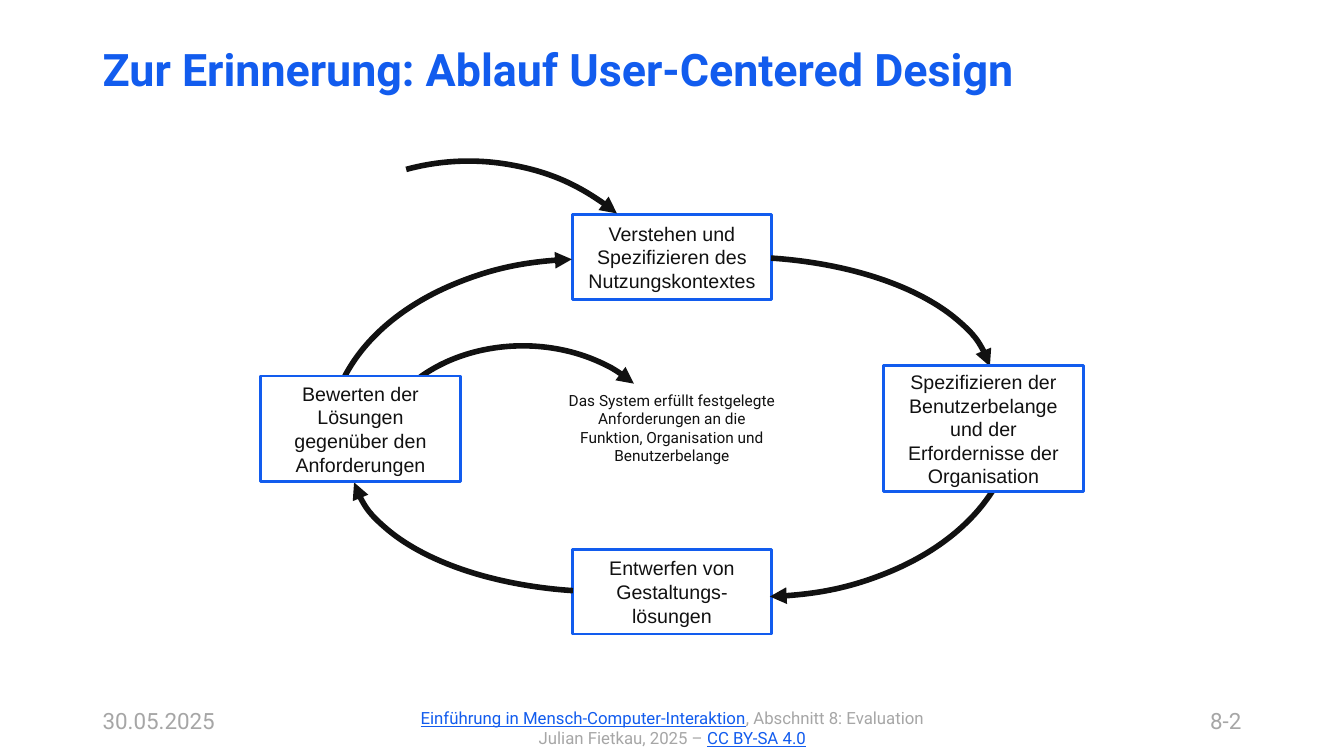
from pptx import Presentation
from pptx.dml.color import RGBColor
from pptx.enum.shapes import MSO_SHAPE
from pptx.enum.text import MSO_ANCHOR, PP_ALIGN
from pptx.oxml import parse_xml
from pptx.oxml.ns import nsdecls
from pptx.util import Inches, Pt

RECT, ARC = MSO_SHAPE.RECTANGLE, MSO_SHAPE.ARC
LEFT, CENTER, RIGHT = PP_ALIGN.LEFT, PP_ALIGN.CENTER, PP_ALIGN.RIGHT
TOP, MIDDLE = MSO_ANCHOR.TOP, MSO_ANCHOR.MIDDLE
CELL = Inches(0.1)
COLS, ROWS = 133.33, 75
BLUE, GRAY, INK, WHITE = "125CEE", "A6A6A6", "111111", "FFFFFF"


def color(code):
    return RGBColor.from_string(code)


def cells(*sizes):
    return [round(size * CELL) for size in sizes]


def around(box, dx, dy, wide, high):
    left, top, width, height = box
    return (left + width / 2 + dx - wide / 2,
            top + height / 2 + dy - high / 2, wide, high)


def write(shape, lines, size, font, code, align=LEFT, anchor=TOP, bold=False):
    frame = shape.text_frame
    frame.word_wrap = True
    frame.vertical_anchor = anchor
    for num, line in enumerate(lines):
        para = frame.add_paragraph() if num else frame.paragraphs[0]
        para.alignment = align
        for text, link in line:
            run = para.add_run()
            run.text = text
            run.font.name = font
            run.font.size = Pt(size)
            run.font.bold = bold
            run.font.underline = link
            run.font.color.rgb = color(BLUE if link else code)
    return frame


def label(slide, box, lines, size, code, **style):
    shape = slide.shapes.add_textbox(*cells(*box))
    return write(shape, lines, size, "Roboto", code, **style)


def plain(*texts):
    return [[(text, False)] for text in texts]


def step(slide, box, texts):
    shape = slide.shapes.add_shape(RECT, *cells(*box))
    shape.shadow.inherit = False
    shape.fill.solid()
    shape.fill.fore_color.rgb = color(WHITE)
    shape.line.color.rgb = color(BLUE)
    shape.line.width = Pt(2)
    write(shape, plain(*texts), 14, "Arial", INK, CENTER, MIDDLE)


def arrow(slide, box, turn, start, end):
    shape = slide.shapes.add_shape(ARC, *cells(*box))
    shape.shadow.inherit = False
    shape.fill.background()
    shape.rotation = turn
    shape.adjustments[0] = start
    shape.adjustments[1] = end
    shape.line.color.rgb = color(INK)
    shape.line.width = Pt(4)
    tip = parse_xml(f'<a:tailEnd {nsdecls("a")} type="triangle"/>')
    shape.line._get_or_add_ln().append(tip)


def header(slide, box):
    frame = label(slide, box, plain("Zur Erinnerung: Ablauf User-Centered Design"),
                  32, BLUE, anchor=MIDDLE, bold=True)
    frame.paragraphs[0].line_spacing = 0.9


def cycle(slide, box):
    wide, reach, rise = 19.8, 30.9, 16.6
    steps = [
        (0, rise, 8.4, ["Entwerfen von", "Gestaltungs-lösungen"]),
        (0, -rise, 8.4, ["Verstehen und", "Spezifizieren des", "Nutzungskontextes"]),
        (reach, 0.45, 12.5, ["Spezifizieren der",
                             "Benutzerbelange und der Erfordernisse der Organisation"]),
        (-reach, 0.45, 10.5, ["Bewerten der", "Lösungen", "gegenüber den",
                              "Anforderungen"]),
    ]
    arrows = [
        (6.5, -3.95, 50.6, 25.3, 0, 170.93, 213.53),
        (-6.5, 3.95, 50.6, 25.3, 180, 170.93, 213.53),
        (8.7, -0.6, 50.6, 35.4, 0, 9.9, 52.03),
        (-8.7, 1.3, 50.6, 35.4, 180, 8.43, 51.59),
        (-20.3, -2.9, 46.8, 46.4, 159.9, 56.96, 89.73),
        (-14.8, 3.5, 29.6, 22.6, 180, 21.67, 87.35),
    ]
    for dx, dy, high, texts in steps[:2]:
        step(slide, around(box, dx, dy, wide, high), texts)
    for dx, dy, width, high, turn, start, end in arrows:
        arrow(slide, around(box, dx, dy, width, high), turn, start, end)
    for dx, dy, high, texts in steps[2:]:
        step(slide, around(box, dx, dy, wide, high), texts)
    note = ("Das System erfüllt festgelegte Anforderungen an die "
            "Funktion, Organisation und Benutzerbelange")
    label(slide, around(box, 0, 0.4, 23.1, 8.4), plain(note), 11, INK, align=CENTER)


def footer(slide, box):
    left, top, width, high = box
    side, mid, last = 17.4, 80.2, 33.1
    credit = [
        [("Einführung in Mensch-Computer-Interaktion", True),
         (", Abschnitt 8: Evaluation", False)],
        [("Julian Fietkau, 2025 – ", False), ("CC BY-SA 4.0", True)],
    ]
    label(slide, (left + side, top, mid, high), credit, 12, GRAY, align=CENTER)
    label(slide, (left, top, side, high), plain("30.05.2025"), 16, GRAY)
    label(slide, (left + width - last, top, last, high), plain("8-2"), 16, GRAY,
          align=RIGHT)


def main():
    deck = Presentation()
    deck.slide_width, deck.slide_height = cells(COLS, ROWS)
    slide = deck.slides.add_slide(deck.slide_layouts[6])
    edge = 9.2
    span = COLS - 2 * edge
    header(slide, (edge, 3.7, span, 6.8))
    cycle(slide, (edge, 16, span, 52.2))
    footer(slide, (edge, 69.7, span, 5))
    deck.save("out.pptx")


if __name__ == "__main__":
    main()
